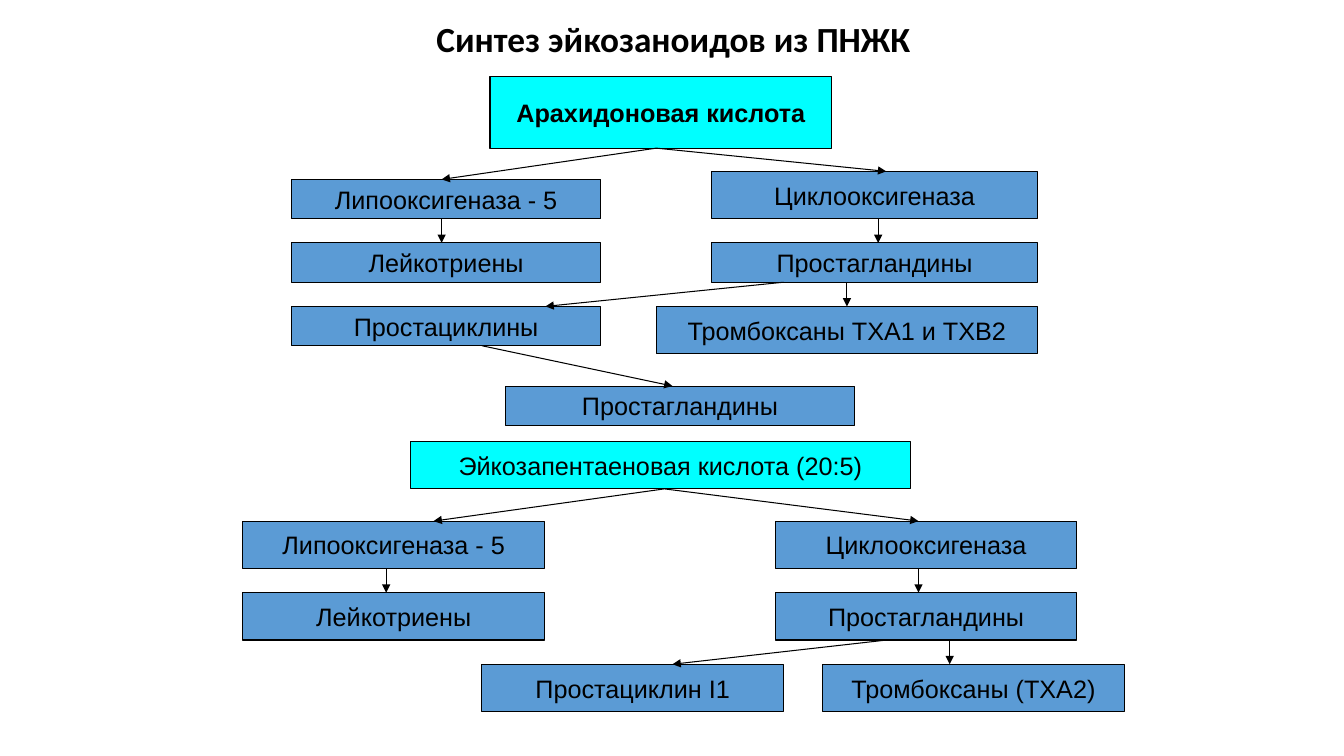
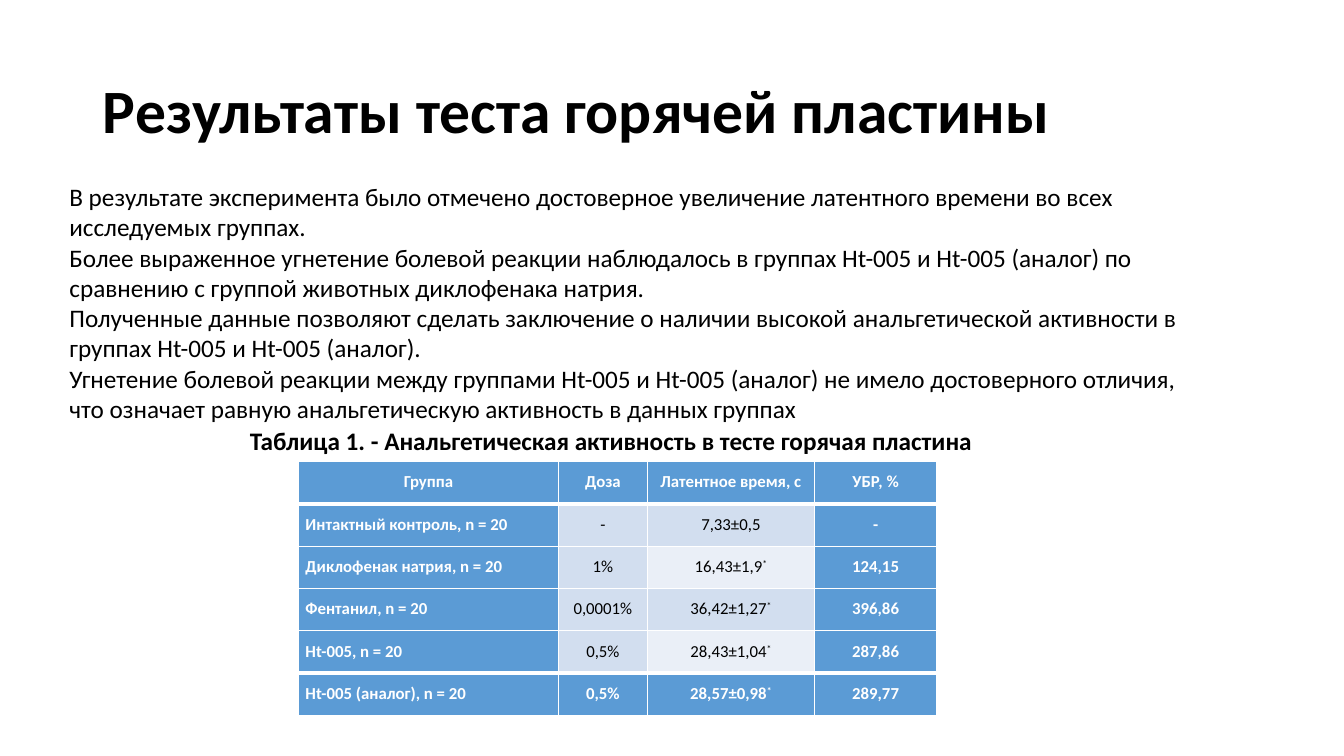
from dataclasses import dataclass

from lxml.etree import SubElement
from pptx import Presentation
from pptx.dml.color import RGBColor
from pptx.enum.shapes import MSO_CONNECTOR, MSO_SHAPE
from pptx.enum.text import MSO_ANCHOR, MSO_AUTO_SIZE, PP_ALIGN
from pptx.oxml.ns import qn
from pptx.util import Inches, Pt


@dataclass(frozen=True)
class Theme:
    black: RGBColor = RGBColor(0x00, 0x00, 0x00)
    white: RGBColor = RGBColor(0xFF, 0xFF, 0xFF)
    blue: RGBColor = RGBColor(0x5B, 0x9B, 0xD5)
    cyan: RGBColor = RGBColor(0x00, 0xFF, 0xFF)
    band_dark: RGBColor = RGBColor(0xD2, 0xDE, 0xEF)
    band_light: RGBColor = RGBColor(0xEA, 0xEF, 0xF7)
    text_font: str = "Calibri"
    diagram_font: str = "Arial"
    title_size: float = 44
    small_title_size: float = 25.2
    body_size: float = 18
    table_size: float = 12
    line_width: float = 0.75
    thin_border: float = 1
    thick_border: float = 3


THEME = Theme()


class Deck:
    def __init__(self, theme):
        self.theme = theme
        self.presentation = Presentation()
        self.presentation.slide_width = Inches(13.33)
        self.presentation.slide_height = Inches(7.5)
        self.slide = None

    def style(self, paragraph, size, color=None, bold=False, name=None,
              alignment=PP_ALIGN.LEFT):
        paragraph.alignment = alignment
        font = paragraph.font
        font.name = name or self.theme.text_font
        font.size = Pt(size)
        font.bold = bold
        font.color.rgb = self.theme.black if color is None else color

    def add_slide(self, title, left, top, width, height, size,
                  alignment=PP_ALIGN.LEFT):
        layout = self.presentation.slide_layouts.get_by_name("Title Only")
        self.slide = self.presentation.slides.add_slide(layout)
        shape = self.slide.shapes.title
        shape.left, shape.top = Inches(left), Inches(top)
        shape.width, shape.height = Inches(width), Inches(height)
        frame = shape.text_frame
        frame.text = title
        frame.auto_size = MSO_AUTO_SIZE.NONE
        frame.vertical_anchor = MSO_ANCHOR.MIDDLE
        paragraph = frame.paragraphs[0]
        paragraph.line_spacing = 0.9
        self.style(paragraph, size, bold=True, alignment=alignment)

    def box(self, text, left, top, width, height, fill, bold=False):
        shape = self.slide.shapes.add_shape(
            MSO_SHAPE.RECTANGLE, Inches(left), Inches(top), Inches(width), Inches(height))
        shape.shadow.inherit = False
        shape.fill.solid()
        shape.fill.fore_color.rgb = fill
        shape.line.color.rgb = self.theme.black
        shape.line.width = Pt(self.theme.line_width)
        frame = shape.text_frame
        frame.text = text
        frame.word_wrap = False
        frame.vertical_anchor = MSO_ANCHOR.MIDDLE
        self.style(frame.paragraphs[0], self.theme.body_size, bold=bold,
                   name=self.theme.diagram_font, alignment=PP_ALIGN.CENTER)
        return shape

    def arrow(self, source, source_x, target, target_x):
        """Point from the bottom edge of one box to the top edge of another."""
        connector = self.slide.shapes.add_connector(
            MSO_CONNECTOR.STRAIGHT, Inches(source_x), source.top + source.height,
            Inches(target_x), target.top)
        connector.line.color.rgb = self.theme.black
        connector.line.width = Pt(self.theme.line_width)
        SubElement(connector.line._get_or_add_ln(), qn("a:tailEnd"), type="triangle")
        SubElement(connector._element.spPr, qn("a:effectLst"))

    def text(self, lines, left, top, width, height, bold=False):
        shape = self.slide.shapes.add_textbox(
            Inches(left), Inches(top), Inches(width), Inches(height))
        frame = shape.text_frame
        frame.word_wrap = True
        frame.auto_size = MSO_AUTO_SIZE.SHAPE_TO_FIT_TEXT
        frame.text = "\n".join(lines)
        for paragraph in frame.paragraphs:
            self.style(paragraph, self.theme.body_size, bold=bold)

    def table(self, rows, left, top, widths, row_height):
        """Accent the outer rows and columns; band the cells inside."""
        theme = self.theme
        last_row, last_column = len(rows) - 1, len(widths) - 1
        table = self.slide.shapes.add_table(
            len(rows), len(widths), Inches(left), Inches(top),
            Inches(sum(widths)), Inches(row_height * len(rows))).table
        table.horz_banding = False
        for column, width in zip(table.columns, widths):
            column.width = Inches(width)
        for row_index, values in enumerate(rows):
            table.rows[row_index].height = Inches(row_height)
            for column_index, value in enumerate(values):
                accent = row_index in (0, last_row) or column_index in (0, last_column)
                if accent:
                    fill = theme.blue
                elif column_index == 2 and row_index % 2 == 0:
                    fill = theme.band_light
                else:
                    fill = theme.band_dark
                cell = table.cell(row_index, column_index)
                edges = [theme.thick_border if edge in (1, last_row) else theme.thin_border
                         for edge in (row_index, row_index + 1)]
                self.cell_borders(cell, *edges)
                cell.fill.solid()
                cell.fill.fore_color.rgb = fill
                cell.margin_left = cell.margin_right = Inches(0.07)
                cell.margin_top = cell.margin_bottom = 0
                paragraph = cell.text_frame.paragraphs[0]
                paragraph.line_spacing = 1.5
                row_name = column_index == 0 and row_index > 0
                self.style(paragraph, theme.table_size,
                           theme.white if accent else theme.black, accent,
                           alignment=PP_ALIGN.JUSTIFY if row_name else PP_ALIGN.CENTER)
                self.marked_text(paragraph, value)

    def cell_borders(self, cell, top_width, bottom_width):
        thin = self.theme.thin_border
        properties = cell._tc.get_or_add_tcPr()
        for side, width in zip("LRTB", (thin, thin, top_width, bottom_width)):
            line = SubElement(properties, qn(f"a:ln{side}"), w=str(Pt(width)))
            fill = SubElement(line, qn("a:solidFill"))
            SubElement(fill, qn("a:srgbClr"), val=str(self.theme.white))

    @staticmethod
    def marked_text(paragraph, value):
        """Write the value, raising a closing asterisk."""
        text, mark, _ = value.partition("*")
        paragraph.add_run().text = text
        if mark:
            run = paragraph.add_run()
            run.text = mark
            run._r.get_or_add_rPr().set("baseline", "30000")


def build_synthesis(deck):
    deck.add_slide("Синтез эйкозаноидов из ПНЖК", 2.18, 0.21, 9, 0.39,
                   THEME.small_title_size, PP_ALIGN.CENTER)
    low, high = 0.39, 0.47

    acid = deck.box("Арахидоновая кислота", 4.86, 0.76, 3.39, 0.71, THEME.cyan, bold=True)
    lipoxygenase, leukotrienes, prostacyclins = [
        deck.box(text, 2.89, 1.78 + 0.63 * tier, 3.07, low, THEME.blue)
        for tier, text in enumerate(("Липооксигеназа - 5", "Лейкотриены", "Простациклины"))]
    cyclooxygenase = deck.box("Циклооксигеназа", 7.06, 1.7, 3.23, high, THEME.blue)
    prostaglandins = deck.box("Простагландины", 7.06, 2.41, 3.23, low, THEME.blue)
    thromboxanes = deck.box("Тромбоксаны ТХА1 и ТХВ2", 6.51, 3.04, 3.78, high, THEME.blue)
    final_prostaglandins = deck.box("Простагландины", 5.01, 3.83, 3.47, low, THEME.blue)

    epa = deck.box("Эйкозапентаеновая кислота (20:5)", 4.07, 4.38, 4.96, high, THEME.cyan)
    epa_lipoxygenase, epa_leukotrienes, epa_cyclooxygenase, epa_prostaglandins, \
        prostacyclin, epa_thromboxanes = [
            deck.box(text, left, 5.17 + 0.71 * tier, 2.99, high, THEME.blue)
            for text, left, tier in (
                ("Липооксигеназа - 5", 2.41, 0),
                ("Лейкотриены", 2.41, 1),
                ("Циклооксигеназа", 7.69, 0),
                ("Простагландины", 7.69, 1),
                ("Простациклин I1", 4.78, 2),
                ("Тромбоксаны (ТХА2)", 8.16, 2))]

    for arrow in (
            (acid, 6.51, lipoxygenase, 4.38),
            (acid, 6.51, cyclooxygenase, 8.79),
            (lipoxygenase, 4.38, leukotrienes, 4.38),
            (cyclooxygenase, 8.71, prostaglandins, 8.71),
            (prostaglandins, 8.4, thromboxanes, 8.4),
            (prostaglandins, 7.77, prostacyclins, 5.41),
            (prostacyclins, 4.78, final_prostaglandins, 6.67),
            (epa, 6.59, epa_lipoxygenase, 4.3),
            (epa, 6.59, epa_cyclooxygenase, 9.11),
            (epa_lipoxygenase, 3.83, epa_leukotrienes, 3.83),
            (epa_cyclooxygenase, 9.11, epa_prostaglandins, 9.11),
            (epa_prostaglandins, 9.42, epa_thromboxanes, 9.42),
            (epa_prostaglandins, 8.79, prostacyclin, 6.67)):
        deck.arrow(*arrow)


def build_results(deck):
    deck.add_slide("Результаты теста горячей пластины", 0.92, 0.4, 11.5, 1.45,
                   THEME.title_size)
    deck.table((
        ("Группа", "Доза", "Латентное время, с", "УБР, %"),
        ("Интактный контроль, n = 20", "-", "7,33±0,5", "-"),
        ("Диклофенак натрия, n = 20", "1%", "16,43±1,9*", "124,15"),
        ("Фентанил, n = 20", "0,0001%", "36,42±1,27*", "396,86"),
        ("Ht-005, n = 20", "0,5%", "28,43±1,04*", "287,86"),
        ("Ht-005 (аналог), n = 20", "0,5%", "28,57±0,98*", "289,77"),
    ), 2.96, 4.58, (2.58, 0.88, 1.66, 1.21), 0.42)
    deck.text((
        "В результате эксперимента было отмечено достоверное увеличение латентного "
        "времени во всех исследуемых группах.",
        "Более выраженное угнетение болевой реакции наблюдалось в группах Ht-005 и "
        "Ht-005 (аналог) по сравнению с группой животных диклофенака натрия.",
        "Полученные данные позволяют сделать заключение о наличии высокой "
        "анальгетической активности в группах Ht-005 и Ht-005 (аналог).",
        "Угнетение болевой реакции между группами Ht-005 и Ht-005 (аналог) не имело "
        "достоверного отличия, что означает равную анальгетическую активность в "
        "данных группах",
    ), 0.59, 1.75, 11.5, 2.52)
    deck.text(("Таблица 1. - Анальгетическая активность в тесте горячая пластина",),
              2.38, 4.17, 8.11, 0.4, bold=True)


def main():
    deck = Deck(THEME)
    build_synthesis(deck)
    build_results(deck)
    deck.presentation.save("out.pptx")


if __name__ == "__main__":
    main()
